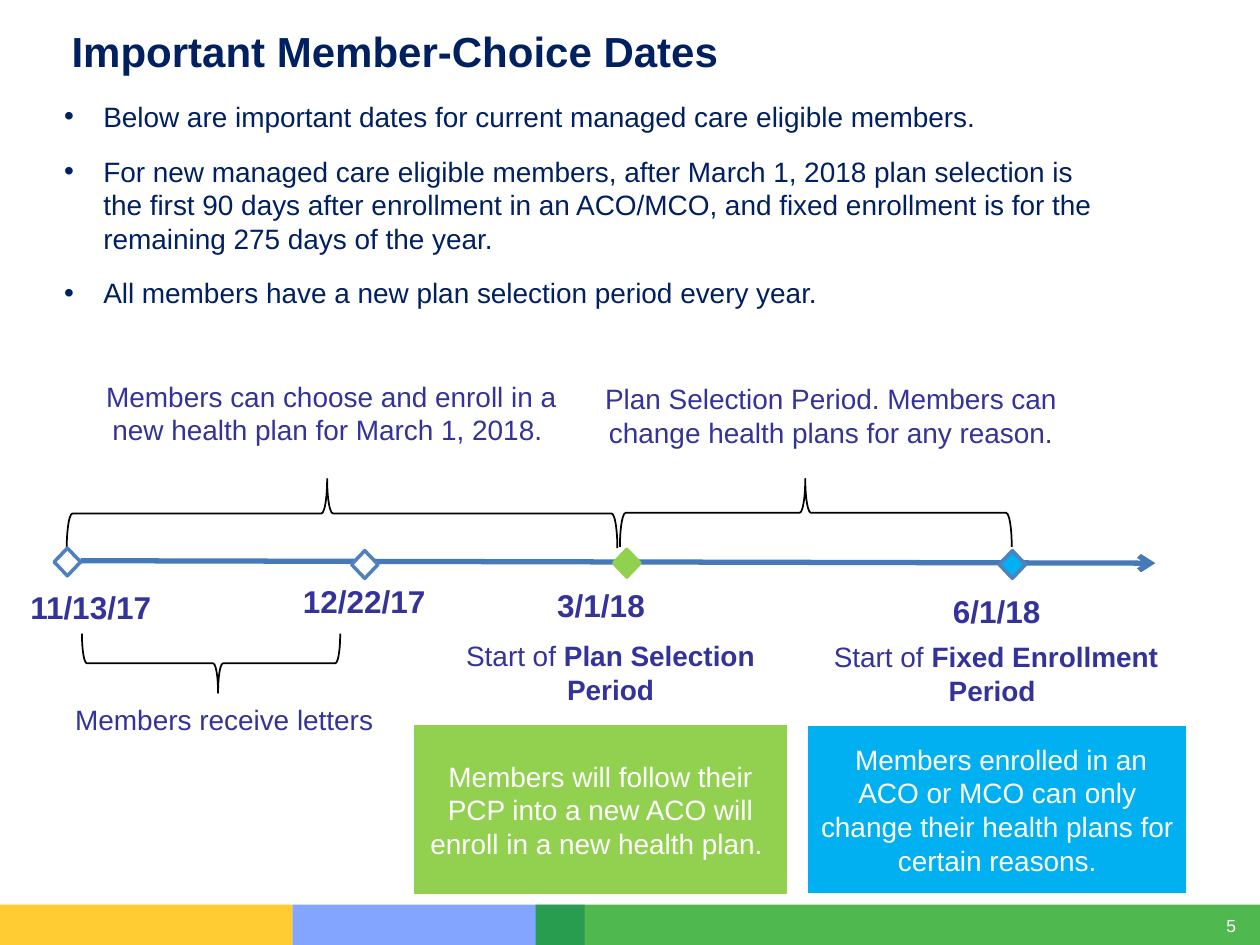
from lxml import etree
from pptx import Presentation
from pptx.dml.color import RGBColor
from pptx.enum.shapes import MSO_CONNECTOR, MSO_SHAPE
from pptx.enum.text import MSO_ANCHOR, PP_ALIGN
from pptx.oxml.ns import qn
from pptx.util import Inches, Pt

RECT, BRACE = MSO_SHAPE.RECTANGLE, MSO_SHAPE.RIGHT_BRACE
DIAMOND = MSO_SHAPE.FLOWCHART_DECISION
LEFT, CENTER, RIGHT = PP_ALIGN.LEFT, PP_ALIGN.CENTER, PP_ALIGN.RIGHT
TOP, MIDDLE = MSO_ANCHOR.TOP, MSO_ANCHOR.MIDDLE

THEME = {
    "font": "Arial", "title": 24, "date": 18, "body": 16, "number": 10,
    "navy": "002060", "indigo": "333399", "white": "FFFFFF", "black": "000000",
    "green": "92D050", "cyan": "00B0F0", "edge": "4F81BD", "axis": "4579B8",
    "band_blue": "5E8BFF", "band_gold": "FFC000", "band_green": "009900",
}

TITLE = "Important Member-Choice Dates"
BULLETS = [
    "Below are important dates for current managed care eligible members.",
    "For new managed care eligible members, after March 1, 2018 plan selection is "
    "the first 90 days after enrollment in an ACO/MCO, and fixed enrollment is for "
    "the remaining 275 days of the year.",
    "All members have a new plan selection period every year.",
]
# left, width, colour, opacity in percent
FOOTER_BANDS = [(2.32, 2.32, "band_blue", 77), (0, 2.32, "band_gold", 80),
                (4.25, 5.75, "band_green", 69)]
# left, top, width, height as seen, rotation
BRACES = [(0.53, 3.8, 4.37, 0.55, 270), (4.92, 3.8, 3.11, 0.54, 270),
          (0.65, 5.03, 2.05, 0.47, 90)]
# left, top, fill, line
MILESTONES = [(0.43, 4.35, "white", "edge"), (2.79, 4.37, "white", "edge"),
              (4.87, 4.36, "green", "green"), (7.93, 4.37, "cyan", "edge")]
DATES = [("11/13/17", (0, 4.62, 1.44, 0.26)), ("12/22/17", (2.12, 4.57, 1.54, 0.51)),
         ("3/1/18", (4.25, 4.6, 1.04, 0.26)), ("6/1/18", (7.31, 4.65, 1.2, 0.32))]
# plain part, bold part, box
CAPTIONS = [
    ("Members can choose and enroll in a new health plan for March 1, 2018. ", "",
     (0.53, 2.96, 4.2, 0.98)),
    ("Plan Selection Period. Members can change health plans for any reason.", "",
     (4.52, 2.98, 4.15, 0.67)),
    ("Members receive letters", "", (0.43, 5.53, 2.7, 0.98)),
    ("Start of ", "Plan Selection Period", (3.6, 5.02, 2.49, 0.57)),
    ("Start of ", "Fixed Enrollment Period ", (6.4, 5.03, 3.01, 0.66)),
]
OUTCOMES = [
    ("Members will follow their PCP into a new ACO will enroll in a new health plan. ",
     (3.29, 5.76, 2.95, 1.33), "green", "green"),
    (" Members enrolled in an ACO or MCO can only change their health plans for "
     "certain reasons.", (6.41, 5.76, 3.01, 1.33), "cyan", "white"),
]


def rgb(name):
    return RGBColor.from_string(THEME[name])


def inches(box):
    return [Inches(v) for v in box]


def write(sp, paragraphs, size="body", color="indigo", bold=False, align=CENTER,
          anchor=TOP, insets=(0.1, 0.05), wrap=True, bullet=False):
    """Fill a shape with paragraphs, each a list of (text, bold) runs or a string."""
    tf = sp.text_frame
    tf.word_wrap, tf.vertical_anchor = wrap, anchor
    tf.margin_left = tf.margin_right = Inches(insets[0])
    tf.margin_top = tf.margin_bottom = Inches(insets[1])
    for i, runs in enumerate(paragraphs):
        p = tf.add_paragraph() if i else tf.paragraphs[0]
        p.alignment = align
        if bullet:
            add_bullet(p, first=i == 0)
        for text, strong in [(runs, bold)] if isinstance(runs, str) else runs:
            r = p.add_run()
            r.text = text
            r.font.name, r.font.size = THEME["font"], Pt(THEME[size])
            r.font.bold, r.font.color.rgb = strong, rgb(color)


def add_bullet(p, first):
    pPr = p._p.get_or_add_pPr()
    pPr.set("marL", str(Inches(0.31)))
    pPr.set("indent", str(-Inches(0.31)))
    etree.SubElement(pPr, qn("a:buFont")).set("typeface", THEME["font"])
    etree.SubElement(pPr, qn("a:buChar")).set("char", "•")
    p.space_before, p.space_after = Pt(0 if first else 6), Pt(6)


def add_text(s, box, paragraphs, **fmt):
    write(s.shapes.add_textbox(*inches(box)), paragraphs, **fmt)


def add_shape(s, kind, box, fill, line=None, weight=1, opacity=100):
    sp = s.shapes.add_shape(kind, *inches(box))
    sp.shadow.inherit = False
    sp.fill.solid()
    sp.fill.fore_color.rgb = rgb(fill)
    if opacity < 100:
        color = sp.fill._xPr.find(".//" + qn("a:srgbClr"))
        etree.SubElement(color, qn("a:alpha")).set("val", str(opacity * 1000))
    if line:
        sp.line.color.rgb, sp.line.width = rgb(line), Pt(weight)
    else:
        sp.line.fill.background()
    return sp


def add_brace(s, left, top, width, height, rotation):
    """Place a turned brace so that it covers the given box after rotation."""
    shift = (width - height) / 2
    sp = add_shape(s, BRACE, (left + shift, top - shift, height, width), "white", "black")
    sp.adjustments[0], sp.adjustments[1] = 0.083, 0.473
    sp.rotation = rotation


def add_axis(s, start, end):
    c = s.shapes.add_connector(MSO_CONNECTOR.STRAIGHT, *inches(start + end))
    c.line.color.rgb, c.line.width = rgb("axis"), Pt(3)
    etree.SubElement(c.line._get_or_add_ln(), qn("a:tailEnd")).set("type", "arrow")
    etree.SubElement(c._element.spPr, qn("a:effectLst"))


def main():
    prs = Presentation()
    prs.slide_width, prs.slide_height = Inches(10), Inches(7.5)
    s = prs.slides.add_slide(prs.slide_layouts[6])

    for left, width, color, opacity in FOOTER_BANDS:
        add_shape(s, RECT, (left, 7.18, width, 0.32), color, opacity=opacity)
    add_text(s, (9.64, 7.26, 0.17, 0.17), ["5"], size="number", color="white",
             align=RIGHT, anchor=MIDDLE, insets=(0, 0), wrap=False)

    add_text(s, (0.47, 0.24, 9.3, 0.33), [TITLE], size="title", color="navy",
             bold=True, align=LEFT, anchor=MIDDLE)
    add_text(s, (0.47, 0.75, 8.34, 1.79), BULLETS, color="navy", align=LEFT,
             insets=(0.04, 0.04), bullet=True)

    for brace in BRACES:
        add_brace(s, *brace)
    add_axis(s, (0.64, 4.45), (9.17, 4.47))
    for left, top, fill, line in MILESTONES:
        add_shape(s, DIAMOND, (left, top, 0.21, 0.22), fill, line, weight=2)
    for date, box in DATES:
        add_text(s, box, [date], size="date", bold=True)
    for plain, strong, box in CAPTIONS:
        runs = [(plain, False), (strong, True)]
        add_text(s, box, [[run for run in runs if run[0]]])
    for text, box, fill, line in OUTCOMES:
        sp = add_shape(s, RECT, box, fill, line, weight=0.75)
        write(sp, [text], color="white", anchor=MIDDLE)

    prs.save("out.pptx")


if __name__ == "__main__":
    main()
